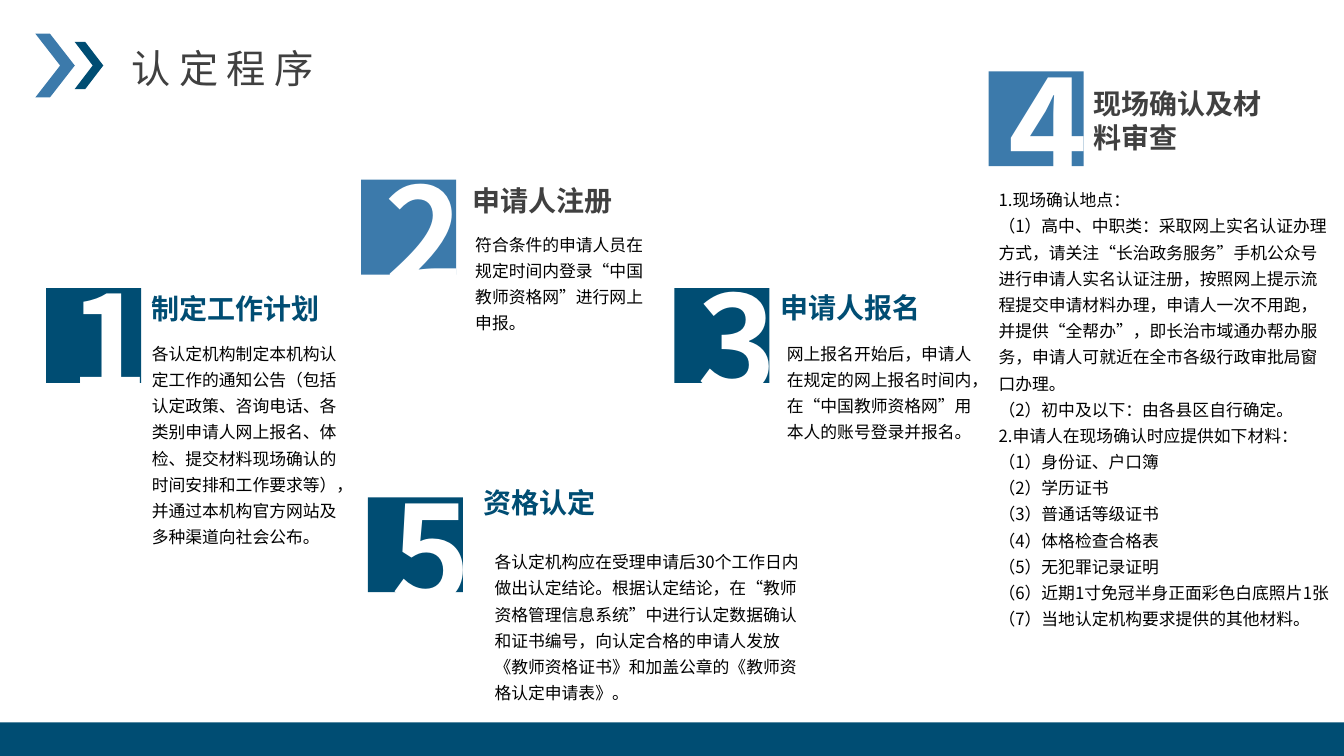
from pptx import Presentation
from pptx.dml.color import RGBColor as Rgb
from pptx.enum.shapes import MSO_SHAPE as Kind
from pptx.enum.text import MSO_ANCHOR as Anchor, MSO_AUTO_SIZE as Fit, PP_ALIGN as Align
from pptx.oxml.ns import qn
from pptx.util import Inches, Pt
from lxml.etree import SubElement

COLORS = {"navy": "004D73", "blue": "3C7AAB", "grey": "404040",
          "white": "FFFFFF", "black": "000000"}
FACE = "Noto Sans CJK SC"
WIDE, HIGH = Inches(13.333), Inches(7.5)
COLS, ROWS = 160, 90

FONTS = {
    "title": {"size": Pt(28), "bold": False},
    "digit": {"size": Pt(96), "bold": True},
    "head": {"size": Pt(20), "bold": True},
    "body": {"size": Pt(12), "bold": False},
}
FRAMES = {
    "title": {"word_wrap": False, "auto_size": Fit.SHAPE_TO_FIT_TEXT,
              "vertical_anchor": Anchor.TOP},
    "digit": {"word_wrap": True, "vertical_anchor": Anchor.TOP},
    "head": {"word_wrap": True, "vertical_anchor": Anchor.BOTTOM},
    "body": {"word_wrap": True, "vertical_anchor": Anchor.TOP,
             "auto_size": Fit.SHAPE_TO_FIT_TEXT},
}
PARAS = {
    "title": {"alignment": Align.LEFT, "line_spacing": 1.0},
    "digit": {"alignment": Align.LEFT},
    "head": {"alignment": Align.LEFT},
    "body": {"alignment": Align.LEFT, "line_spacing": 1.3},
}

# Corner of the tile, then offsets from it: digit column, heading, body box
STEPS = [
    {"tile": (5.5, 34.3), "digit": 1.6, "head": (11.3, 0),
     "body": (11.4, 5.3, 25.4, 26.4), "name": "制定工作计划",
     "text": ["各认定机构制定本机构认定工作的通知公告（包括认定政策、咨询电话、"
              "各类别申请人网上报名、体检、提交材料现场确认的时间安排和工作要求等），"
              "并通过本机构官方网站及多种渠道向社会公布。"]},
    {"tile": (43, 21.4), "digit": 1.6, "head": (12.1, 0),
     "body": (12.4, 5.2, 24, 13.8), "name": "申请人注册",
     "text": ["符合条件的申请人员在规定时间内登录“中国教师资格网”进行网上申报。"]},
    {"tile": (80.3, 34.3), "digit": 1.6, "head": (11.4, -0.1),
     "body": (12.2, 5.3, 25.4, 13.8), "name": "申请人报名",
     "text": ["网上报名开始后，申请人在规定的网上报名时间内，"
              "在“中国教师资格网”用本人的账号登录并报名。"]},
    {"tile": (117.7, 8.5), "digit": 1.2, "head": (11.3, 5.4),
     "body": (0, 12.8, 42, 54.7), "name": "现场确认及材料审查",
     "text": ["1.现场确认地点：",
              "（1）高中、中职类：采取网上实名认证办理方式，请关注“长治政务服务”"
              "手机公众号进行申请人实名认证注册，按照网上提示流程提交申请材料办理，"
              "申请人一次不用跑，并提供“全帮办”，即长治市域通办帮办服务，"
              "申请人可就近在全市各级行政审批局窗口办理。",
              "（2）初中及以下：由各县区自行确定。",
              "2.申请人在现场确认时应提供如下材料：",
              "（1）身份证、户口簿",
              "（2）学历证书",
              "（3）普通话等级证书",
              "（4）体格检查合格表",
              "（5）无犯罪记录证明",
              "（6）近期1寸免冠半身正面彩色白底照片1张",
              "（7）当地认定机构要求提供的其他材料。"]},
    {"tile": (43.8, 59.2), "digit": 1.6, "head": (12.6, -1.8),
     "body": (13.9, 5.2, 38.9, 20), "name": "资格认定",
     "text": ["各认定机构应在受理申请后30个工作日内做出认定结论。根据认定结论，"
              "在“教师资格管理信息系统”中进行认定数据确认和证书编号，"
              "向认定合格的申请人发放《教师资格证书》和加盖公章的《教师资格认定申请表》。"]},
]


def grid(x, y, w, h):
    """Turn columns and rows into slide lengths."""
    return (round(x * WIDE / COLS), round(y * HIGH / ROWS),
            round(w * WIDE / COLS), round(h * HIGH / ROWS))


def apply(item, values):
    for key, value in values.items():
        setattr(item, key, value)


def paint(shape, tone):
    shape.fill.solid()
    shape.fill.fore_color.rgb = Rgb.from_string(COLORS[tone])
    shape.line.fill.background()
    shape.shadow.inherit = False


def write(shape, lines, style, tone, gap=None):
    frame = shape.text_frame
    apply(frame, FRAMES[style])
    for i, line in enumerate(lines):
        para = frame.add_paragraph() if i else frame.paragraphs[0]
        apply(para, PARAS[style])
        run = para.add_run()
        run.text = line
        apply(run.font, {"name": FACE, **FONTS[style]})
        run.font.color.rgb = Rgb.from_string(COLORS[tone])
        # East Asian face and letter gap
        props = run.font._element
        props.set("lang", "zh-CN")
        SubElement(props, qn("a:ea")).set("typeface", FACE)
        if gap:
            props.set("spc", str(gap * 100))


def add_text(slide, box, lines, style, tone):
    write(slide.shapes.add_textbox(*grid(*box)), lines, style, tone)


def add_rect(slide, box, tone):
    paint(slide.shapes.add_shape(Kind.RECTANGLE, *grid(*box)), tone)


def add_arrow(slide, box, tone):
    x, y, w, h = grid(*box)
    arm = 0.37
    shares = [(0, 0), (arm, 0), (1, 0.5), (arm, 1), (0, 1), (1 - arm, 0.5)]
    spots = [(round(x + w * a), round(y + h * b)) for a, b in shares]
    form = slide.shapes.build_freeform(*spots[0])
    form.add_line_segments(spots[1:], close=True)
    paint(form.convert_to_shape(), tone)


def add_header(slide, x, y):
    add_arrow(slide, (x, y, 4.7, 7.6), "blue")
    add_arrow(slide, (x + 4.7, y + 1, 3.4, 5.6), "navy")
    title = slide.shapes.title
    apply(title, dict(zip(("left", "top", "width", "height"),
                          grid(x + 10.3, y + 0.7, 25.1, 6.8))))
    write(title, ["认定程序"], "title", "grey", gap=6)


def add_step(slide, num, step):
    x, y = step["tile"]
    odd = num % 2
    add_rect(slide, (x, y, 11.3, 11.3), "navy" if odd else "blue")
    add_text(slide, (x + step["digit"], y - 4, 11.4, 20.6),
             [str(num)], "digit", "white")
    dx, dy = step["head"]
    add_text(slide, (x + dx, y + dy, 25.4, 5),
             [step["name"]], "head", "navy" if odd else "grey")
    dx, dy, w, h = step["body"]
    add_text(slide, (x + dx, y + dy, w, h), step["text"], "body", "black")


def main():
    deck = Presentation()
    deck.slide_width, deck.slide_height = WIDE, HIGH
    slide = deck.slides.add_slide(deck.slide_layouts[5])
    add_header(slide, 4.2, 4)
    # Bottom band
    add_rect(slide, (0, 86, COLS, 4), "navy")
    for num, step in enumerate(STEPS, 1):
        add_step(slide, num, step)
    deck.save("out.pptx")


if __name__ == "__main__":
    main()
